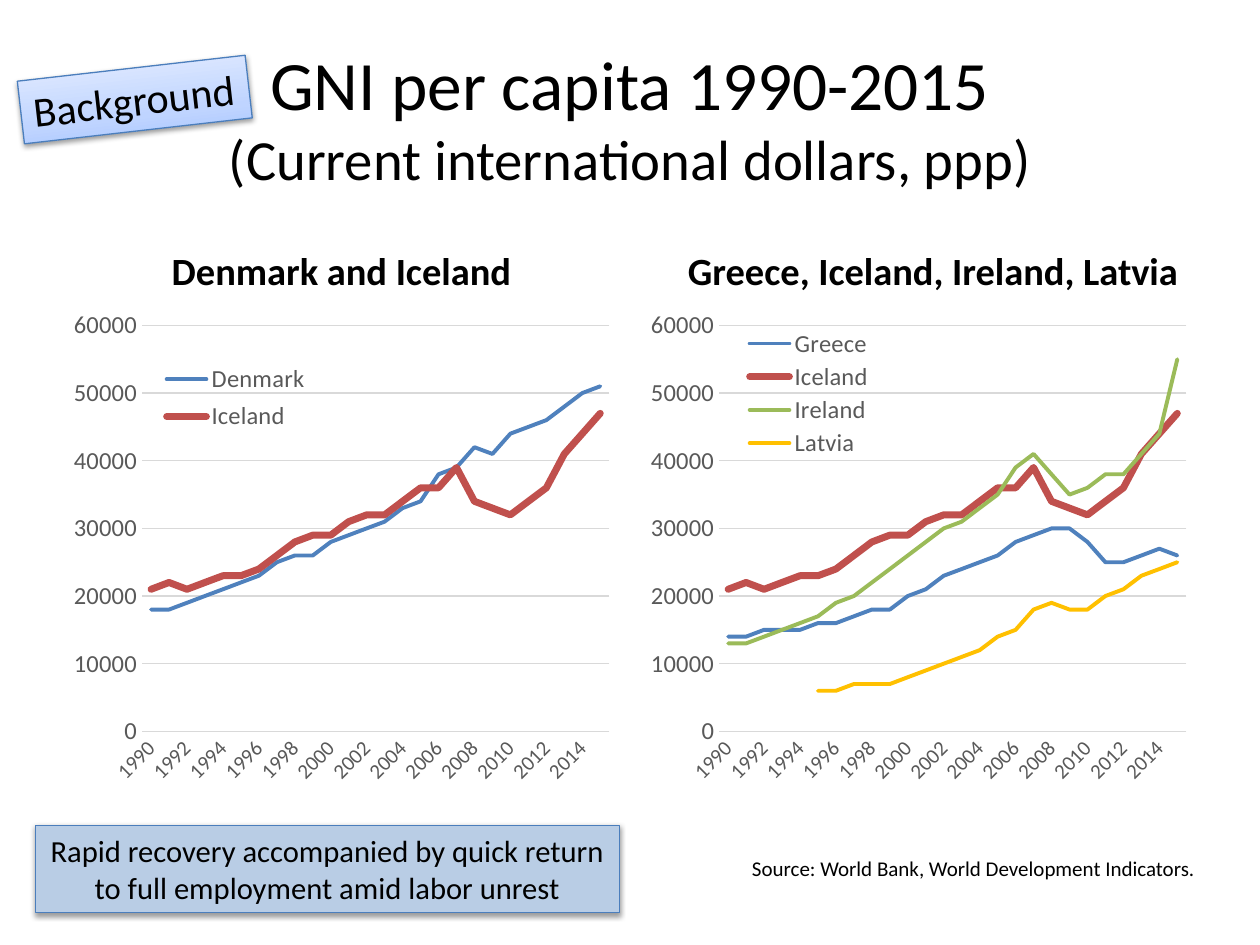
from typing import NamedTuple

from lxml.etree import SubElement
from pptx import Presentation
from pptx.chart.data import CategoryChartData
from pptx.dml.color import RGBColor
from pptx.enum.chart import XL_CHART_TYPE, XL_LEGEND_POSITION, XL_MARKER_STYLE, XL_TICK_MARK
from pptx.enum.shapes import MSO_SHAPE
from pptx.enum.text import MSO_ANCHOR, MSO_AUTO_SIZE, PP_ALIGN
from pptx.oxml import parse_xml
from pptx.oxml.ns import nsdecls, qn
from pptx.util import Inches, Pt

FONT = "Calibri"
BLACK = RGBColor(0x00, 0x00, 0x00)
GRAY = RGBColor(0x59, 0x59, 0x59)
GRID = RGBColor(0xD9, 0xD9, 0xD9)
BLUE = RGBColor(0x4F, 0x81, 0xBD)
RED = RGBColor(0xC0, 0x50, 0x4D)
GREEN = RGBColor(0x9B, 0xBB, 0x59)
GOLD = RGBColor(0xFF, 0xC0, 0x00)
PALE_BLUE = RGBColor(0xB9, 0xCD, 0xE5)
OUTLINE = RGBColor(0x4B, 0x7E, 0xBC)
BADGE_STOPS = ((0, "A4C4FF"), (35, "BFD4FF"), (100, "E6EEFF"))

SLIDE_WIDTH, SLIDE_HEIGHT = Inches(10), Inches(7.5)
YEARS = [str(year) for year in range(1990, 2016)]


class Box(NamedTuple):
    """Left, top, width and height in percent of the slide or chart."""
    left: float
    top: float
    width: float
    height: float

    def on_slide(self) -> tuple:
        sides = (SLIDE_WIDTH, SLIDE_HEIGHT) * 2
        return tuple(round(share * side / 100) for share, side in zip(self, sides))


class Country(NamedTuple):
    name: str
    color: RGBColor
    thousands: list
    weight: float = 2.25


class Panel(NamedTuple):
    heading: str
    heading_box: Box
    chart_box: Box
    legend_box: Box
    countries: tuple


DENMARK = Country("Denmark", BLUE, [
    18, 18, 19, 20, 21, 22, 23, 25, 26, 26, 28, 29, 30,
    31, 33, 34, 38, 39, 42, 41, 44, 45, 46, 48, 50, 51])
ICELAND = Country("Iceland", RED, [
    21, 22, 21, 22, 23, 23, 24, 26, 28, 29, 29, 31, 32,
    32, 34, 36, 36, 39, 34, 33, 32, 34, 36, 41, 44, 47], 4)
GREECE = Country("Greece", BLUE, [
    14, 14, 15, 15, 15, 16, 16, 17, 18, 18, 20, 21, 23,
    24, 25, 26, 28, 29, 30, 30, 28, 25, 25, 26, 27, 26])
IRELAND = Country("Ireland", GREEN, [
    13, 13, 14, 15, 16, 17, 19, 20, 22, 24, 26, 28, 30,
    31, 33, 35, 39, 41, 38, 35, 36, 38, 38, 41, 44, 55])
LATVIA = Country("Latvia", GOLD, [None] * 5 + [
    6, 6, 7, 7, 7, 8, 9, 10, 11, 12, 14, 15, 18, 19, 18, 18, 20, 21, 23, 24, 25])

PLOT_BOX = Box(14.2, 4.7, 83.9, 74.6)
PANELS = (
    Panel("Denmark and Iceland", Box(5, 22.4, 44.2, 9.33), Box(5, 31.73, 44.2, 57.6),
          Box(17, 10.5, 28, 15), (DENMARK, ICELAND)),
    Panel("Greece, Iceland, Ireland, Latvia", Box(50.8, 22.4, 46.5, 9.33),
          Box(50.8, 31.73, 44.2, 57.6), Box(17.3, 4.7, 26, 25),
          (GREECE, ICELAND, IRELAND, LATVIA)),
)


def style_font(font, size: float, color: RGBColor = BLACK, bold: bool = False) -> None:
    for name, value in {"name": FONT, "size": Pt(size), "bold": bold}.items():
        setattr(font, name, value)
    font.color.rgb = color


def write(shape, text: str, size: float, align=PP_ALIGN.CENTER, bold: bool = False,
          **frame_format):
    frame = shape.text_frame
    for name, value in frame_format.items():
        setattr(frame, name, value)
    paragraph = frame.paragraphs[0]
    paragraph.alignment = align
    run = paragraph.add_run()
    run.text = text
    style_font(run.font, size, bold=bold)
    return paragraph


def add_callout(slide, box: Box):
    """Add an outlined rectangle with a soft shadow below it."""
    shape = slide.shapes.add_shape(MSO_SHAPE.RECTANGLE, *box.on_slide())
    shape.fill.solid()
    shape.fill.fore_color.rgb = PALE_BLUE
    shape.line.color.rgb = OUTLINE
    shape.line.width = Pt(0.75)
    shape.shadow.inherit = False
    shape._element.spPr.find(qn("a:effectLst")).append(parse_xml(
        f'<a:outerShdw {nsdecls("a")} blurRad="40000" dist="20000" dir="5400000" '
        'rotWithShape="0"><a:srgbClr val="000000"><a:alpha val="38000"/>'
        '</a:srgbClr></a:outerShdw>'))
    return shape


def fill_gradient(shape, stops: tuple) -> None:
    stop_xml = "".join(f'<a:gs pos="{share * 1000}"><a:srgbClr val="{color}"/></a:gs>'
                       for share, color in stops)
    properties = shape._element.spPr
    properties.replace(properties.find(qn("a:solidFill")), parse_xml(
        f'<a:gradFill {nsdecls("a")} rotWithShape="1"><a:gsLst>{stop_xml}</a:gsLst>'
        '<a:lin ang="16200000" scaled="0"/></a:gradFill>'))


def place(element, box: Box, inner: bool = False) -> None:
    """Give a plot area or legend a manual layout."""
    for old in element.findall(qn("c:layout")):
        element.remove(old)
    target = '<c:layoutTarget val="inner"/>' if inner else ""
    modes = "".join(f'<c:{side}Mode val="edge"/>' for side in "xy")
    shares = "".join(f'<c:{side} val="{share / 100:.3f}"/>' for side, share in zip("xywh", box))
    layout = parse_xml(f'<c:layout {nsdecls("c")}><c:manualLayout>{target}{modes}{shares}'
                       '</c:manualLayout></c:layout>')
    position = element.find(qn("c:legendPos"))
    element.insert(0 if position is None else 1, layout)


def style_axes(chart) -> None:
    years, dollars = chart.category_axis, chart.value_axis
    for axis, size in ((years, 12), (dollars, 14)):
        axis.major_tick_mark = axis.minor_tick_mark = XL_TICK_MARK.NONE
        style_font(axis.tick_labels.font, size, GRAY)
    for name, value in {"minimum_scale": 0, "maximum_scale": 60000, "major_unit": 10000,
                        "has_major_gridlines": True}.items():
        setattr(dollars, name, value)
    dollars.format.line.fill.background()
    for line in (years.format.line, dollars.major_gridlines.format.line):
        line.color.rgb = GRID
        line.width = Pt(0.75)
    years_xml = years._element
    years_xml.find(qn("c:txPr")).find(qn("a:bodyPr")).set("rot", "-2700000")
    skip = SubElement(years_xml, qn("c:tickLblSkip"), val="2")
    years_xml.find(qn("c:noMultiLvlLbl")).addprevious(skip)


def add_panel(slide, panel: Panel) -> None:
    heading = slide.shapes.add_textbox(*panel.heading_box.on_slide())
    write(heading, panel.heading, 22, bold=True, word_wrap=True,
          vertical_anchor=MSO_ANCHOR.BOTTOM)

    data = CategoryChartData(number_format="0")
    data.categories = YEARS
    for country in panel.countries:
        data.add_series(country.name, [None if value is None else value * 1000
                                       for value in country.thousands])
    chart = slide.shapes.add_chart(XL_CHART_TYPE.LINE, *panel.chart_box.on_slide(), data).chart
    chart.has_title = False
    style_font(chart.font, 10)
    chart.plots[0].vary_by_categories = False
    for series, country in zip(chart.plots[0].series, panel.countries):
        series.smooth = False
        series.marker.style = XL_MARKER_STYLE.NONE
        series.format.line.color.rgb = country.color
        series.format.line.width = Pt(country.weight)
        series.format.line._ln.set("cap", "rnd")
    style_axes(chart)
    place(chart._chartSpace.chart.plotArea, PLOT_BOX, inner=True)

    chart.has_legend = True
    legend = chart.legend
    legend.position = XL_LEGEND_POSITION.BOTTOM
    legend.include_in_layout = False
    style_font(legend.font, 14, GRAY)
    place(legend._element, panel.legend_box)


def main() -> None:
    presentation = Presentation()
    presentation.slide_width, presentation.slide_height = SLIDE_WIDTH, SLIDE_HEIGHT
    slide = presentation.slides.add_slide(presentation.slide_layouts[5])

    title = slide.shapes.title
    title.left, title.top, title.width, title.height = Box(5, 4, 90, 16.67).on_slide()
    paragraph = write(title, "GNI per capita 1990-2015", 39.6, word_wrap=True,
                      auto_size=MSO_AUTO_SIZE.NONE, vertical_anchor=MSO_ANCHOR.MIDDLE)
    paragraph.add_line_break()
    subtitle = paragraph.add_run()
    subtitle.text = "(Current international dollars, ppp)"
    style_font(subtitle.font, 32.4)

    for panel in PANELS:
        add_panel(slide, panel)

    source = slide.shapes.add_textbox(*Box(58.7, 89.87, 38, 4).on_slide())
    write(source, "Source: World Bank, World Development Indicators.", 12, PP_ALIGN.LEFT,
          word_wrap=False, auto_size=MSO_AUTO_SIZE.SHAPE_TO_FIT_TEXT)
    recovery = add_callout(slide, Box(2.8, 87.33, 46.4, 9.2))
    write(recovery, "Rapid recovery accompanied by quick return to full employment "
          "amid labor unrest", 17.5, word_wrap=True)
    badge = add_callout(slide, Box(1.6, 7.2, 18.2, 6.67))
    fill_gradient(badge, BADGE_STOPS)
    badge.rotation = 353.5
    write(badge, "Background", 24, PP_ALIGN.LEFT, word_wrap=False)

    presentation.save("out.pptx")


if __name__ == "__main__":
    main()
